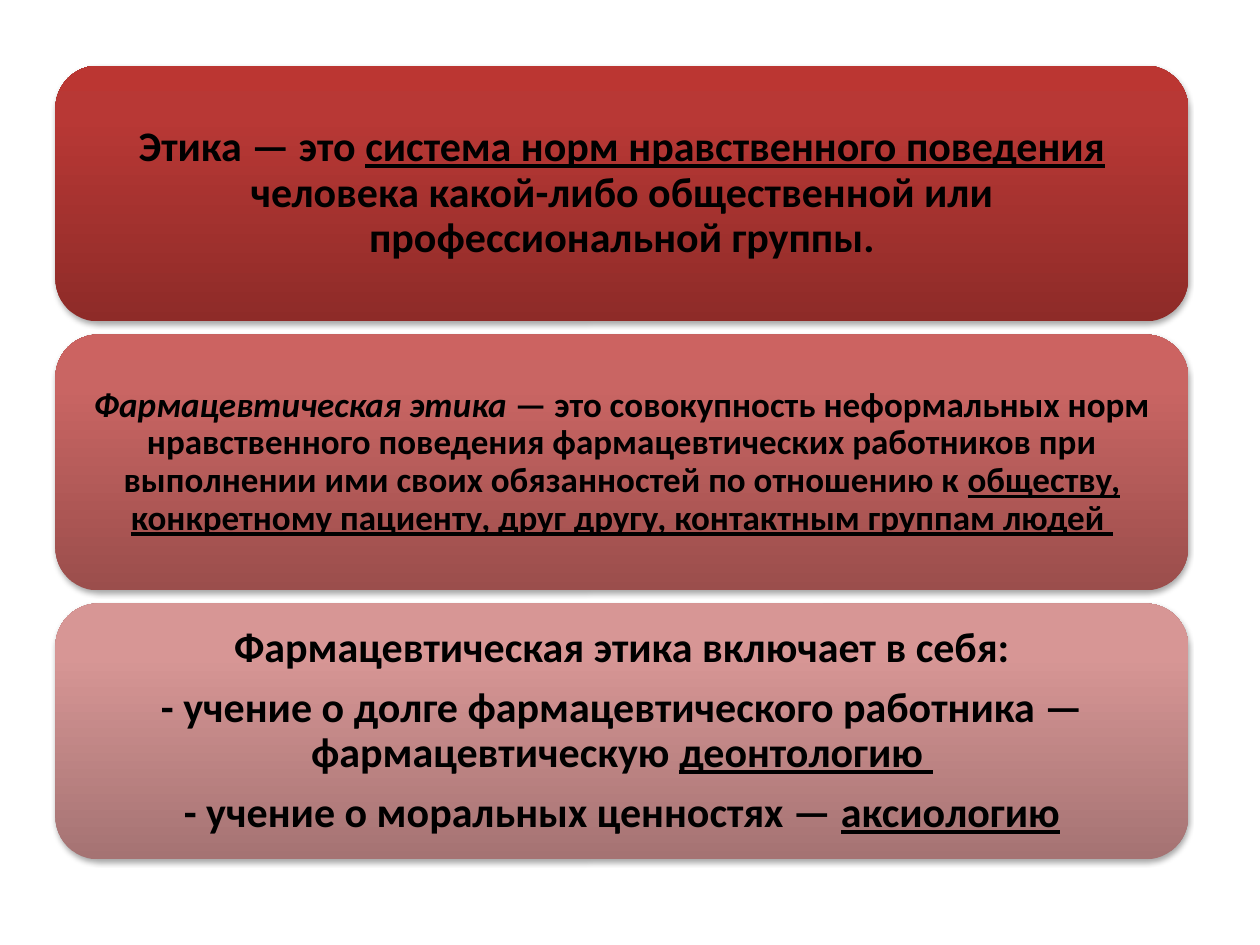
from dataclasses import dataclass

from lxml import etree
from pptx import Presentation
from pptx.dml.color import RGBColor
from pptx.enum import shapes, text
from pptx.oxml import ns
from pptx.util import Pt

LEFT, TOP, WIDTH, HEIGHT = 31.7, 37.5, 647.3, 146.2
PITCH = 153.7
PADDING = 7.2


@dataclass(frozen=True)
class Run:
    text: str
    underline: bool = False
    italic: bool = False


@dataclass(frozen=True)
class Panel:
    stops: tuple[str, str, str]  # bottom, 80 %, top
    size: int
    insets: tuple[float, float]  # horizontal, vertical
    paragraphs: list[list[Run]]


PANELS = [
    Panel(("8E2B28", "B83835", "BB3632"), 24, (7.2, 3.6), [
        [Run("Этика — это "),
         Run("система норм нравственного поведения ", underline=True),
         Run("человека какой-либо общественной или профессиональной группы.")],
    ]),
    Panel(("9B4E4C", "C96563", "CC6361"), 20, (6, 3), [
        [Run("Фармацевтическая этика", italic=True),
         Run(" — это совокупность неформальных норм нравственного поведения "
             "фармацевтических работников при выполнении ими своих обязанностей "
             "по отношению к "),
         Run("обществу, конкретному пациенту, друг другу, контактным группам людей ",
             underline=True)],
    ]),
    Panel(("A57373", "D79695", "D99594"), 24, (7.2, 3.6), [
        [Run("Фармацевтическая этика включает в себя:")],
        [Run("- учение о долге фармацевтического работника — фармацевтическую "),
         Run("деонтологию ", underline=True)],
        [Run("- учение о моральных ценностях — "),
         Run("аксиологию", underline=True)],
    ]),
]


def rgb(value: str) -> RGBColor:
    return RGBColor.from_string(value)


def add_child(parent, tag: str, **attrs):
    return etree.SubElement(parent, ns.qn(tag), {k: str(v) for k, v in attrs.items()})


def set_gradient(sp, colors: tuple[str, str, str]) -> None:
    """Fill from bottom to top with three stops."""
    sp.fill.gradient()
    sp.fill.gradient_angle = 90
    stops = sp.fill._fill._gradFill.find(ns.qn("a:gsLst"))
    for stop in list(stops):
        stops.remove(stop)
    for percent, color in zip((0, 80, 100), colors):
        add_child(add_child(stops, "a:gs", pos=percent * 1000), "a:srgbClr", val=color)


def set_shadow(sp) -> None:
    sp.shadow.inherit = False
    effects = sp._element.spPr.find(ns.qn("a:effectLst"))
    shadow = add_child(effects, "a:outerShdw", blurRad=Pt(3.1), dist=Pt(1.8),
                       dir=90 * 60000, rotWithShape=0)
    add_child(add_child(shadow, "a:srgbClr", val="000000"), "a:alpha", val=35000)


def add_text(s, panel: Panel, top: float) -> None:
    box = s.shapes.add_textbox(Pt(LEFT + PADDING), Pt(top + PADDING),
                               Pt(WIDTH - 2 * PADDING), Pt(HEIGHT - 2 * PADDING))
    tf = box.text_frame
    tf.word_wrap = True
    tf.vertical_anchor = text.MSO_ANCHOR.MIDDLE
    tf.margin_left = tf.margin_right = Pt(panel.insets[0])
    tf.margin_top = tf.margin_bottom = Pt(panel.insets[1])
    for i, runs in enumerate(panel.paragraphs):
        p = tf.add_paragraph() if i else tf.paragraphs[0]
        p.alignment = text.PP_ALIGN.CENTER
        p.line_spacing = 0.9
        p.space_after = Pt(0.35 * panel.size)
        p.font.name = "Calibri"
        p.font.size = Pt(panel.size)
        p.font.bold = True
        p.font.color.rgb = rgb("000000")
        for run in runs:
            r = p.add_run()
            r.text = run.text
            if run.underline:
                r.font.underline = True
            if run.italic:
                r.font.italic = True


def add_panel(s, panel: Panel, top: float) -> None:
    sp = s.shapes.add_shape(shapes.MSO_SHAPE.ROUNDED_RECTANGLE,
                            Pt(LEFT), Pt(top), Pt(WIDTH), Pt(HEIGHT))
    set_gradient(sp, panel.stops)
    sp.line.fill.background()
    set_shadow(sp)
    add_text(s, panel, top)


def main() -> None:
    prs = Presentation()
    prs.slide_width, prs.slide_height = Pt(720), Pt(540)
    s = prs.slides.add_slide(prs.slide_layouts[6])
    for i, panel in enumerate(PANELS):
        add_panel(s, panel, TOP + i * PITCH)
    prs.save("out.pptx")


if __name__ == "__main__":
    main()
